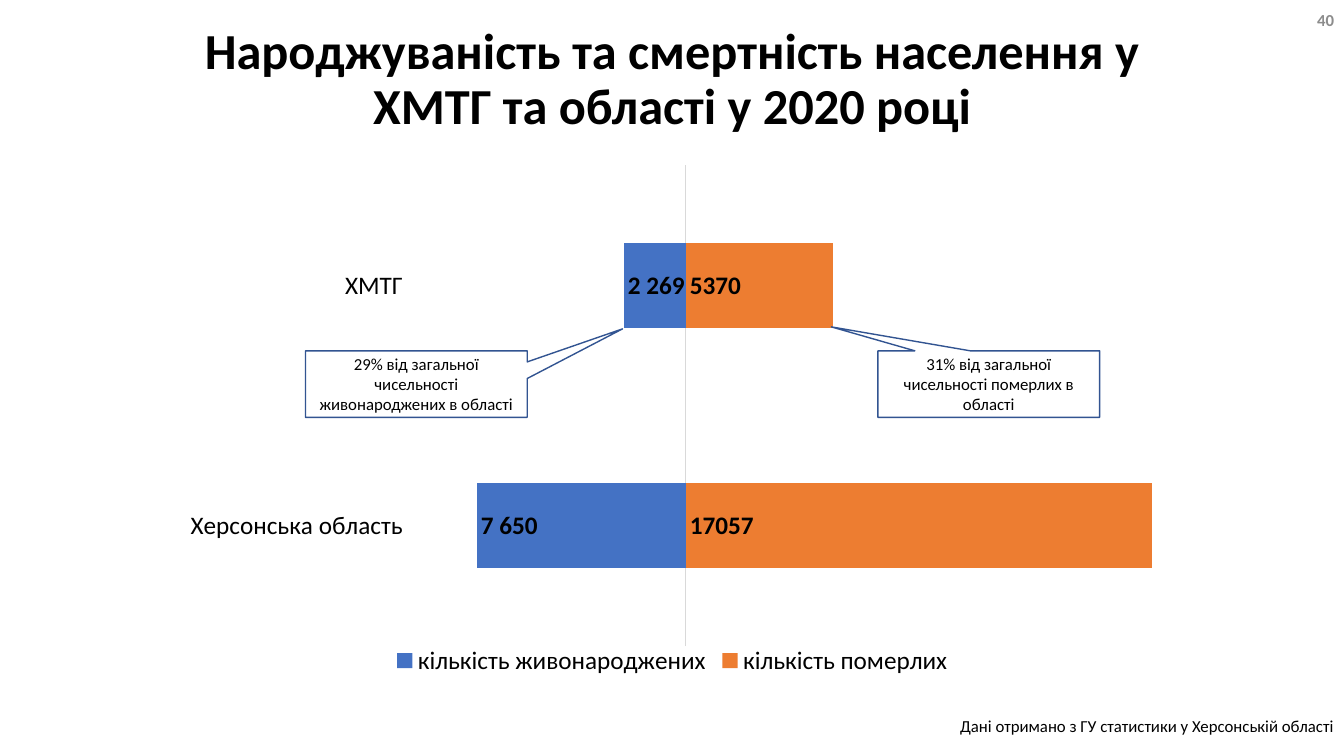
from lxml import etree
from pptx import Presentation
from pptx import util as u
from pptx.chart.data import CategoryChartData
from pptx.dml.color import RGBColor
from pptx.enum import chart as ch, shapes, text
from pptx.oxml import ns

NUMBER = r"#\ ##0;#\ ##0"
MARGIN, WIDTH = 66.24, 828


def rgb(value):
    return RGBColor.from_string(value)


class Deck:
    """Holds the style and the current slide, and adds elements in points."""

    font, ink, outline, axis = "Calibri", "000000", "325491", "D9D9D9"

    def __init__(self, width, height):
        self.prs = Presentation()
        self.prs.slide_width, self.prs.slide_height = u.Pt(width), u.Pt(height)
        self.s = self.prs.slides.add_slide(self.prs.slide_layouts[5])

    def style(self, font, size, color=None, bold=False):
        font.name, font.size, font.bold = self.font, u.Pt(size), bold
        font.color.rgb = rgb(color or self.ink)

    def add_text(self, sp, lines, size, align, anchor, color=None, bold=False):
        tf = sp.text_frame
        tf.word_wrap, tf.vertical_anchor = True, anchor
        p = tf.paragraphs[0]
        p.alignment = align
        for i, line in enumerate(lines):
            if i:
                p.add_line_break()
            r = p.add_run()
            r.text = line
            self.style(r.font, size, color, bold)
        return p

    def title(self, box, lines):
        sp = self.s.shapes.title
        sp.left, sp.top, sp.width, sp.height = map(u.Pt, box)
        p = self.add_text(sp, lines, 36, text.PP_ALIGN.CENTER, text.MSO_ANCHOR.MIDDLE, bold=True)
        p.line_spacing = 0.9
        sp.text_frame.auto_size = text.MSO_AUTO_SIZE.NONE

    def label(self, box, line, anchor, **look):
        sp = self.s.shapes.add_textbox(*map(u.Pt, box))
        self.add_text(sp, [line], 12, text.PP_ALIGN.RIGHT, anchor, **look)

    def callout(self, box, tip, line):
        sp = self.s.shapes.add_shape(shapes.MSO_SHAPE.RECTANGULAR_CALLOUT, *map(u.Pt, box))
        sp.shadow.inherit = False
        sp.adjustments[0], sp.adjustments[1] = tip
        sp.fill.background()
        sp.line.color.rgb, sp.line.width = rgb(self.outline), u.Pt(1)
        self.add_text(sp, [line], 12, text.PP_ALIGN.CENTER, text.MSO_ANCHOR.MIDDLE)

    def bars(self, box, categories, series, limits, layout):
        data = CategoryChartData()
        data.categories = categories
        for name, values, *_ in series:
            data.add_series(name, values)
        chart = self.s.shapes.add_chart(
            ch.XL_CHART_TYPE.BAR_STACKED, *map(u.Pt, box), data).chart
        self.style(chart.font, 18)
        chart.has_title = False
        chart.has_legend = True
        chart.legend.position = ch.XL_LEGEND_POSITION.BOTTOM
        chart.legend.include_in_layout = False
        self.style(chart.legend.font, 18)

        cat, val = chart.category_axis, chart.value_axis
        cat.tick_label_position = ch.XL_TICK_LABEL_POSITION.LOW
        cat.major_tick_mark = cat.minor_tick_mark = ch.XL_TICK_MARK.NONE
        cat.format.line.color.rgb = rgb(self.axis)
        cat.format.line.width = u.Pt(0.75)
        self.style(cat.tick_labels.font, 18)
        val.minimum_scale, val.maximum_scale = limits
        val.has_major_gridlines = val.visible = False
        val.tick_labels.number_format = NUMBER
        val.tick_labels.number_format_is_linked = False

        plot = chart.plots[0]
        plot.gap_width, plot.overlap, plot.vary_by_categories = 182, 100, False
        for ser, (_, _, color, position, fmt) in zip(plot.series, series):
            ser.format.fill.solid()
            ser.format.fill.fore_color.rgb = rgb(color)
            ser.invert_if_negative = False
            labels = ser.data_labels
            labels.show_value, labels.position = True, position
            labels.number_format, labels.number_format_is_linked = fmt, False
            self.style(labels.font, 18, bold=True)
        self.place_plot(chart, layout)

    def place_plot(self, chart, layout):
        area = chart.element.find(".//" + ns.qn("c:plotArea")) if hasattr(chart, "element") \
            else chart.plots[0]._element.getparent()
        for old in area.findall(ns.qn("c:layout")):
            area.remove(old)
        outer = etree.Element(ns.qn("c:layout"))
        area.insert(0, outer)
        manual = etree.SubElement(outer, ns.qn("c:manualLayout"))
        settings = [("layoutTarget", "inner"), ("xMode", "edge"), ("yMode", "edge"),
                    *zip("xywh", layout)]
        for tag, value in settings:
            etree.SubElement(manual, ns.qn("c:" + tag)).set("val", str(value))


def main():
    deck = Deck(960, 540)
    deck.title((MARGIN, 28.8, WIDTH, 57.6),
               ["Народжуваність та смертність населення у", "ХМТГ та області у 2020 році"])
    position = ch.XL_LABEL_POSITION
    deck.bars(
        (MARGIN, 86.4, WIDTH, 400), ["Херсонська область", "ХМТГ"],
        [("кількість живонароджених", (-7650, -2269), "4472C4", position.INSIDE_END, NUMBER),
         ("кількість померлих", (17057, 5370), "ED7D31", position.INSIDE_BASE, "General")],
        (-10000, 20000), (0.276, 0.079, 0.707, 0.859))
    deck.label((0, 507.6, 960, 21.6), "Дані отримано з ГУ статистики у Херсонській області",
               text.MSO_ANCHOR.TOP)
    for left, tip, line in (
            (218.2, (0.93, -0.83), "29% від загальної чисельності живонароджених в області"),
            (627.1, (-0.71, -0.86), "31% від загальної чисельності померлих в області")):
        deck.callout((left, 250.6, 158.4, 47.5), tip, line)
    deck.label((744, 0, 216, 28.8), "40", text.MSO_ANCHOR.MIDDLE, color="8C8C8C", bold=True)
    deck.prs.save("out.pptx")


if __name__ == "__main__":
    main()
